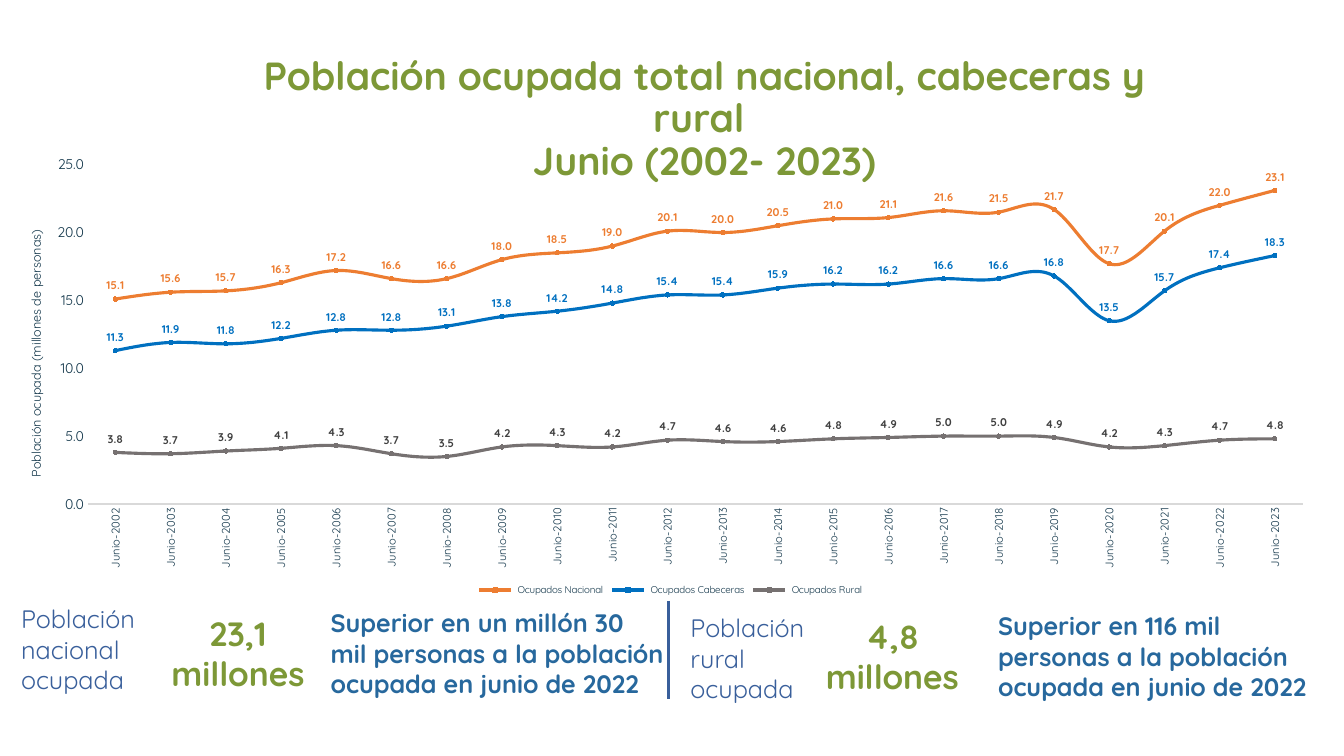
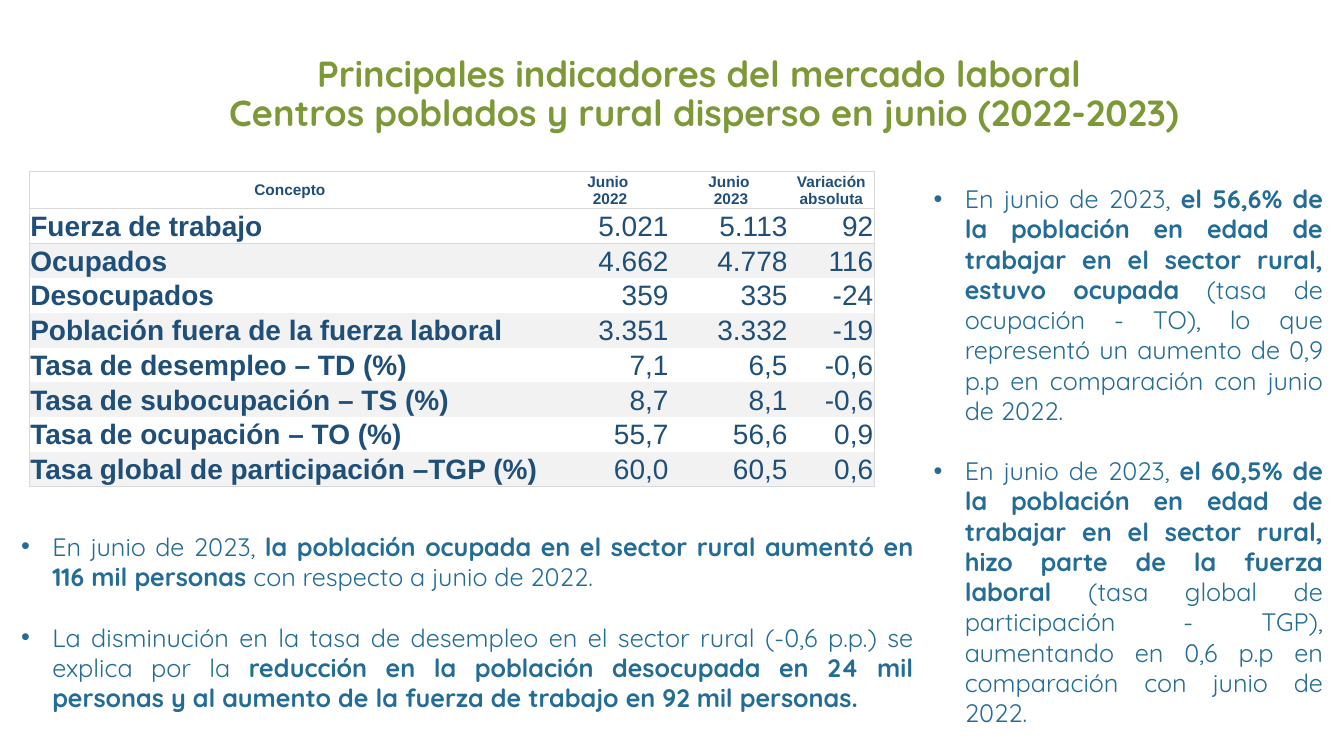
from dataclasses import dataclass

from lxml.etree import SubElement
from pptx import Presentation
from pptx.chart.data import CategoryChartData
from pptx.dml.color import RGBColor
from pptx.enum.chart import (XL_CHART_TYPE, XL_LABEL_POSITION, XL_LEGEND_POSITION,
                             XL_MARKER_STYLE, XL_TICK_MARK)
from pptx.enum.shapes import MSO_CONNECTOR
from pptx.enum.text import MSO_ANCHOR, MSO_AUTO_SIZE, PP_ALIGN
from pptx.oxml.ns import qn
from pptx.util import Inches, Pt

W, H = Inches(13.33), Inches(7.5)
FONT = "Quicksand"
COLORS = {
    "green": "7D9837", "label": "395F9B", "note": "27689D", "body": "236C95",
    "axis": "12364A", "rule": "D9D9D9", "orange": "ED7D31", "blue": "0070C0",
    "gray": "767171", "dark": "404040", "table": "1F4E78", "white": "FFFFFF",
    "band": "F2F2F2",
}


@dataclass(frozen=True)
class Box:
    """A frame in percent of the slide's width and height."""
    x: float
    y: float
    w: float
    h: float

    def emu(self) -> tuple[int, int, int, int]:
        return (int(W * self.x / 100), int(H * self.y / 100),
                int(W * self.w / 100), int(H * self.h / 100))


@dataclass(frozen=True)
class Stat:
    box: Box
    lines: tuple[str, ...]
    size: int
    color: str
    bold: bool = False
    align: PP_ALIGN = PP_ALIGN.LEFT


@dataclass(frozen=True)
class Line:
    name: str
    values: tuple[float, ...]
    color: str
    label_color: str


@dataclass(frozen=True)
class Bullets:
    box: Box
    items: tuple[tuple[str, ...], ...]  # parts alternate regular, bold


# Shared helpers
def rgb(name: str) -> RGBColor:
    return RGBColor.from_string(COLORS[name])


def set_font(font, *, size: float, color: str, bold: bool = False, name: str = FONT) -> None:
    font.name, font.size, font.bold = name, Pt(size), bold
    font.color.rgb = rgb(color)


def add_run(p, text: str, **fmt) -> None:
    r = p.add_run()
    r.text = text
    set_font(r.font, **fmt)


def write(tf, lines, *, align=PP_ALIGN.LEFT, spacing=None, **fmt) -> None:
    for i, line in enumerate(lines):
        p = tf.add_paragraph() if i else tf.paragraphs[0]
        p.alignment = align
        if spacing:
            p.line_spacing = spacing
        add_run(p, line, **fmt)


def add_box(s, box: Box):
    tf = s.shapes.add_textbox(*box.emu()).text_frame
    tf.word_wrap = True
    tf.auto_size = MSO_AUTO_SIZE.SHAPE_TO_FIT_TEXT
    return tf


def add_slide(prs, title: tuple[str, ...], size: float):
    s = prs.slides.add_slide(prs.slide_layouts[5])
    sp = s.shapes.title
    sp.left, sp.top, sp.width, sp.height = Box(15.23, 6.8, 74.34, 15.87).emu()
    tf = sp.text_frame
    tf.word_wrap, tf.auto_size = True, MSO_AUTO_SIZE.NONE
    tf.vertical_anchor = MSO_ANCHOR.TOP
    write(tf, title, align=PP_ALIGN.CENTER, spacing=0.9, size=size, color="green", bold=True)
    return s


# Chart
def set_layout(parent, index: int, target: str = "", **shares: float) -> None:
    old = parent.find(qn("c:layout"))
    if old is not None:
        parent.remove(old)
    layout = parent.makeelement(qn("c:layout"))
    parent.insert(index, layout)
    manual = SubElement(layout, qn("c:manualLayout"))
    values = {"layoutTarget": target} if target else {}
    values |= {"xMode": "edge", "yMode": "edge"} | shares
    for tag, value in values.items():
        SubElement(manual, qn(f"c:{tag}")).set("val", str(value))


def add_line_chart(s, box: Box, cats: list[str], lines: tuple[Line, ...]) -> None:
    data = CategoryChartData(number_format="0.0")
    data.categories = cats
    for line in lines:
        data.add_series(line.name, line.values)
    chart = s.shapes.add_chart(XL_CHART_TYPE.LINE_MARKERS, *box.emu(), data).chart
    chart.has_title = False
    set_font(chart.font, size=8, color="axis")
    chart.plots[0].vary_by_categories = False
    plot_area = chart._chartSpace.chart.plotArea
    set_layout(plot_area, 0, "inner", x=0.058, y=0.018, w=0.919, h=0.766)

    chart.has_legend = True
    chart.legend.position = XL_LEGEND_POSITION.BOTTOM
    chart.legend.include_in_layout = False
    set_font(chart.legend.font, size=7, color="axis")

    cat, val = chart.category_axis, chart.value_axis
    for axis, size in ((cat, 8), (val, 10)):
        axis.major_tick_mark = axis.minor_tick_mark = XL_TICK_MARK.NONE
        axis.has_major_gridlines = False
        set_font(axis.tick_labels.font, size=size, color="axis")
    cat.format.line.color.rgb = rgb("rule")
    cat.format.line.width = Pt(0.75)
    cat._element.txPr.bodyPr.set("rot", "-5400000")
    val.format.line.fill.background()
    val.minimum_scale, val.maximum_scale, val.major_unit = 0, 25, 5
    val.tick_labels.number_format = "0.0"
    val.tick_labels.number_format_is_linked = False
    tf = val.axis_title.text_frame
    write(tf, ["Población ocupada (millones de personas)"], size=9, color="axis")
    tf._txBody.bodyPr.set("rot", "-5400000")
    tf._txBody.bodyPr.set("vert", "horz")
    set_layout(val.axis_title._element, 1, x=0.01, y=0.16)

    for series, line in zip(chart.plots[0].series, lines):
        series.smooth = True
        series.format.line.color.rgb = rgb(line.color)
        series.format.line.width = Pt(2.25)
        marker = series.marker
        marker.style, marker.size = XL_MARKER_STYLE.CIRCLE, 3
        marker.format.fill.solid()
        marker.format.fill.fore_color.rgb = rgb(line.color)
        marker.format.line.color.rgb = rgb(line.color)
        labels = series.data_labels
        labels.show_value, labels.position = True, XL_LABEL_POSITION.ABOVE
        labels.number_format, labels.number_format_is_linked = "0.0", False
        set_font(labels.font, size=8, color=line.label_color, bold=True)


def add_divider(s, x: float, top: float, bottom: float) -> None:
    px = int(W * x / 100)
    line = s.shapes.add_connector(MSO_CONNECTOR.STRAIGHT, px, int(H * top / 100),
                                  px, int(H * bottom / 100))
    line.line.color.rgb = rgb("label")
    line.line.width = Pt(2.25)
    SubElement(line._element.spPr, qn("a:effectLst"))


# Table
def set_borders(cell, sides: str) -> None:
    tc_pr = cell._tc.get_or_add_tcPr()
    for side in "LRTB":
        ln = SubElement(tc_pr, qn(f"a:ln{side}"))
        if side in sides:
            ln.set("w", str(Pt(0.5)))
            fill = SubElement(ln, qn("a:solidFill"))
            SubElement(fill, qn("a:srgbClr")).set("val", COLORS["rule"])
        else:
            SubElement(ln, qn("a:noFill"))


def add_table(s, box: Box, rows: tuple, shares: tuple[float, ...]) -> None:
    last_row, last_col = len(rows) - 1, len(shares) - 1
    frame = s.shapes.add_table(len(rows), len(shares), *box.emu())
    table = frame.table
    table.first_row = table.horz_banding = False
    for col, share in zip(table.columns, shares):
        col.width = int(W * box.w / 100 * share / sum(shares))
    head = Inches(0.37)
    for i, row in enumerate(rows):
        table.rows[i].height = int((H * box.h / 100 - head) / last_row) if i else head
        for j, text in enumerate(row):
            cell = table.cell(i, j)
            cell.margin_left = cell.margin_right = cell.margin_top = Inches(0.01)
            cell.margin_bottom = 0
            cell.vertical_anchor = MSO_ANCHOR.MIDDLE
            set_borders(cell, "L" * (j == 0) + "R" * (j == last_col)
                        + "T" * (i <= 2) + "B" * (i in (0, 1, last_row)))
            cell.fill.solid()
            cell.fill.fore_color.rgb = rgb("band" if i and i % 2 == 0 else "white")
            align = PP_ALIGN.CENTER if i == 0 else PP_ALIGN.RIGHT if j else PP_ALIGN.LEFT
            write(cell.text_frame, text.split("\n"), align=align, name="Arial",
                  size=20 if i else 11, color="table", bold=i == 0 or j == 0)


def add_bullets(s, bullets: Bullets) -> None:
    tf = add_box(s, bullets.box)
    for i, parts in enumerate(bullets.items):
        p = tf.add_paragraph() if i else tf.paragraphs[0]
        p.alignment = PP_ALIGN.JUSTIFY
        if i:
            p.space_before = Pt(21.6)
        p_pr = p._p.get_or_add_pPr()
        p_pr.set("marL", str(Inches(0.31)))
        p_pr.set("indent", str(-Inches(0.31)))
        SubElement(p_pr, qn("a:buFont")).set("typeface", "Arial")
        SubElement(p_pr, qn("a:buChar")).set("char", "•")
        for k, text in enumerate(parts):
            add_run(p, text, size=18, color="body", bold=k % 2 == 1)


# Content
YEARS = [f"Junio-{year}" for year in range(2002, 2024)]
LINES = (
    Line(" Ocupados Nacional ", (15.1, 15.6, 15.7, 16.3, 17.2, 16.6, 16.6, 18, 18.5, 19, 20.1, 20,
         20.5, 21, 21.1, 21.6, 21.5, 21.7, 17.7, 20.1, 22, 23.1), "orange", "orange"),
    Line(" Ocupados Cabeceras ", (11.3, 11.9, 11.8, 12.2, 12.8, 12.8, 13.1, 13.8, 14.2, 14.8, 15.4,
         15.4, 15.9, 16.2, 16.2, 16.6, 16.6, 16.8, 13.5, 15.7, 17.4, 18.3), "blue", "blue"),
    Line(" Ocupados Rural ", (3.8, 3.7, 3.9, 4.1, 4.3, 3.7, 3.5, 4.2, 4.3, 4.2, 4.7, 4.6,
         4.6, 4.8, 4.9, 5, 5, 4.9, 4.2, 4.3, 4.7, 4.8), "gray", "dark"),
)
STATS = (
    Stat(Box(0.83, 79.2, 12.08, 13.47), ("Población nacional", "ocupada"), 18, "label"),
    Stat(Box(11.33, 80.4, 12.75, 12.13), ("23,1 millones",), 24, "green", True, PP_ALIGN.CENTER),
    Stat(Box(23.86, 79.73, 26.33, 13.47), ("Superior en un millón 30 mil personas a la "
         "población ocupada en junio de 2022",), 18, "note", True),
    Stat(Box(50.64, 80.4, 12.08, 13.47), ("Población rural", "ocupada"), 18, "label"),
    Stat(Box(60.02, 80.8, 12.75, 12.13), ("4,8 millones",), 24, "green", True, PP_ALIGN.CENTER),
    Stat(Box(73.52, 80.13, 26.33, 13.47), ("Superior en 116 mil personas a la población "
         "ocupada en junio de 2022",), 18, "note", True),
)
INDICATORS = (
    ("Concepto", "Junio \n2022", "Junio\n 2023", "Variación absoluta"),
    ("Fuerza de trabajo", "5.021", "5.113", "92"),
    ("Ocupados", "4.662", "4.778", "116"),
    ("Desocupados", "359", "335", "-24"),
    ("Población fuera de la fuerza laboral", "3.351", "3.332", "-19"),
    ("Tasa de desempleo – TD (%)", "7,1", "6,5", "-0,6"),
    ("Tasa de subocupación – TS (%)", "8,7", "8,1", "-0,6"),
    ("Tasa de ocupación – TO (%)", "55,7", "56,6", "0,9"),
    ("Tasa global de participación –TGP (%)", "60,0", "60,5", "0,6"),
)
NOTES = (
    Bullets(Box(0.83, 69.6, 67.89, 25.6), (
        ("En junio de 2023, ", "la población ocupada en el sector rural aumentó en 116 mil "
         "personas ", "con respecto a junio de 2022."),
        ("La disminución en la tasa de desempleo en el sector rural (-0,6 p.p.) se explica por "
         "la ", "reducción en la población desocupada en 24 mil personas y al aumento de la "
         "fuerza de trabajo en 92 mil personas."))),
    Bullets(Box(68.72, 23.6, 30.46, 70), (
        ("En junio de 2023, ", "el 56,6% de la población en edad de trabajar en el sector rural, "
         "estuvo ocupada ", "(tasa de ocupación - TO), lo que representó un aumento de 0,9 p.p "
         "en comparación con junio de 2022."),
        ("En junio de 2023, ", "el 60,5% de la población en edad de trabajar en el sector rural, "
         "hizo parte de la fuerza laboral ", "(tasa global de participación - TGP), aumentando "
         "en 0,6 p.p en comparación con junio de 2022."))),
)


def main() -> None:
    prs = Presentation()
    prs.slide_width, prs.slide_height = W, H

    # Employed population
    s = add_slide(prs, ("Población ocupada total nacional, cabeceras y rural ",
                        "Junio (2002- 2023)"), 28)
    for st in STATS:
        write(add_box(s, st.box), st.lines, align=st.align, size=st.size,
              color=st.color, bold=st.bold)
    add_divider(s, 49.74, 79.47, 92.53)
    add_line_chart(s, Box(0.83, 20.67, 98.35, 58.67), YEARS, LINES)

    # Labour market indicators
    s = add_slide(prs, ("Principales indicadores del mercado laboral ",
                        "Centros poblados y rural disperso en junio (2022-2023)"), 25.9)
    add_table(s, Box(2.18, 22.67, 62.87, 41.73), INDICATORS, (5.17, 1.18, 1.18, 0.85))
    for bullets in NOTES:
        add_bullets(s, bullets)
    prs.save("out.pptx")


if __name__ == "__main__":
    main()
